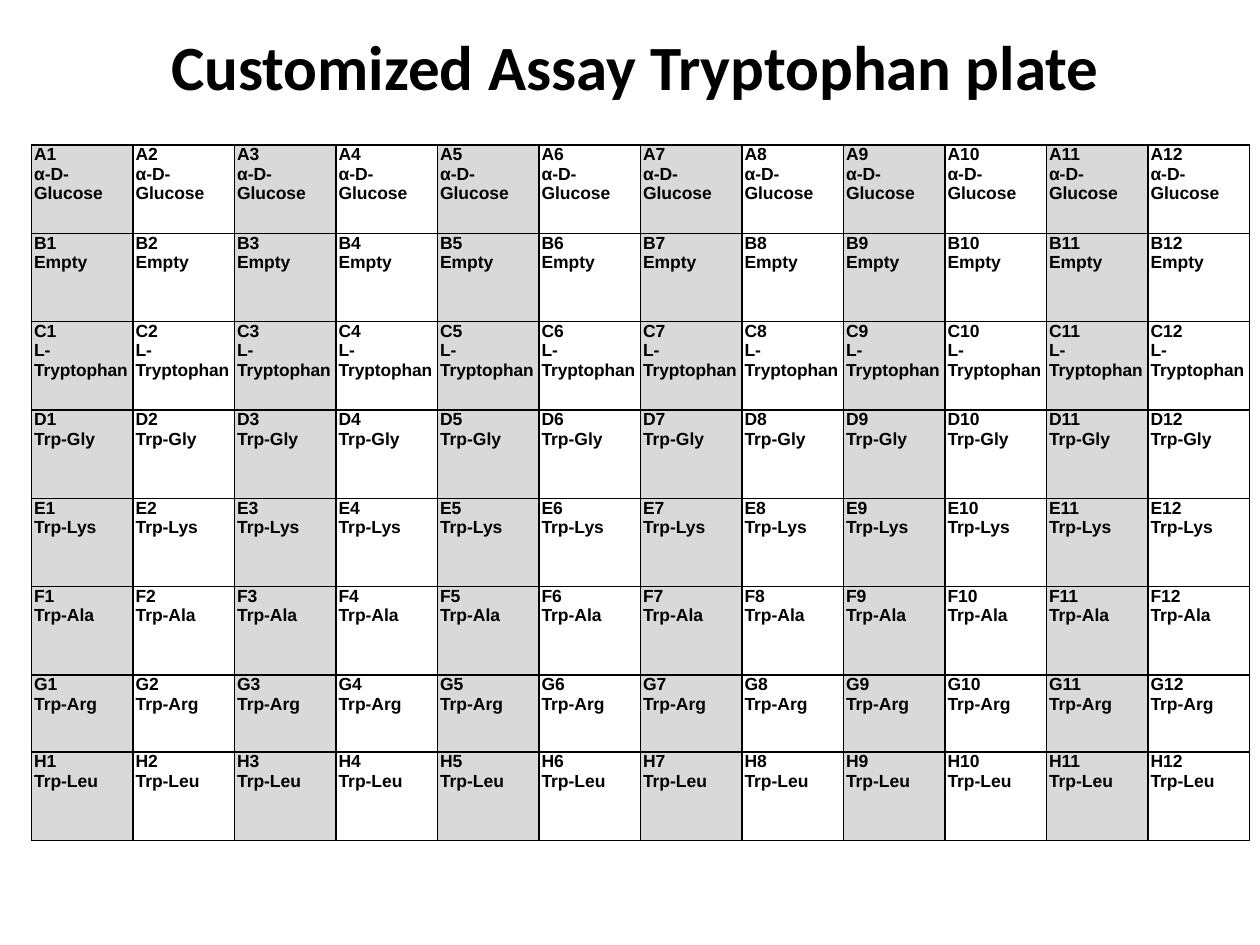
from dataclasses import dataclass

from lxml import etree
from pptx import Presentation
from pptx.dml.color import RGBColor
from pptx.enum import text as t
from pptx.oxml.ns import qn
from pptx.util import Pt

BLACK, WHITE, GREY = "000000", "FFFFFF", "D9D9D9"
COLS, COL_W = 12, 58


@dataclass
class Row:
    mark: str
    name: str
    tail: str = ""  # slightly smaller end of the name
    high: float = 50.5


ROWS = [
    Row("A", "α-D-Glucose"),
    Row("B", "Empty"),
    Row("C", "L-", "Tryptophan"),
    Row("D", "Trp-Gly"),
    Row("E", "Trp-Lys"),
    Row("F", "Trp-Ala"),
    Row("G", "Trp-Arg", high=44),
    Row("H", "Trp-Leu"),
]


def tint(code: str) -> RGBColor:
    return RGBColor.from_string(code)


def style(run, face: str, size: float) -> None:
    run.font.name = face
    run.font.size = Pt(size)
    run.font.bold = True
    run.font.color.rgb = tint(BLACK)


def edge(cell) -> None:
    """Give a cell a thin black line on all four sides."""
    props = cell._tc.get_or_add_tcPr()
    for spot, side in enumerate(("a:lnL", "a:lnR", "a:lnT", "a:lnB")):
        line = etree.Element(qn(side), w=str(Pt(1)))
        fill = etree.SubElement(line, qn("a:solidFill"))
        etree.SubElement(fill, qn("a:srgbClr"), val=BLACK)
        props.insert(spot, line)


def draw_well(cell, row: Row, num: int) -> None:
    cell.margin_left = cell.margin_right = Pt(1.5)
    cell.margin_top = cell.margin_bottom = 0
    cell.vertical_anchor = t.MSO_ANCHOR.TOP
    cell.fill.solid()
    cell.fill.fore_color.rgb = tint(GREY if num % 2 else WHITE)
    edge(cell)

    cell.text_frame.text = f"{row.mark}{num}\n{row.name}"
    for para in cell.text_frame.paragraphs:
        for run in para.runs:
            style(run, "Arial", 10)
    if row.tail:
        run = cell.text_frame.paragraphs[-1].add_run()
        run.text = row.tail
        style(run, "Arial", 9.9)


def draw_plate(slide) -> None:
    frame = slide.shapes.add_table(
        len(ROWS), COLS, Pt(18), Pt(82.8),
        Pt(COLS * COL_W), Pt(sum(row.high for row in ROWS)))
    table = frame.table
    table.first_row = table.horz_banding = False
    for col in table.columns:
        col.width = Pt(COL_W)
    for i, row in enumerate(ROWS):
        table.rows[i].height = Pt(row.high)
        for j in range(COLS):
            draw_well(table.cell(i, j), row, j + 1)


def draw_title(slide, words: str) -> None:
    title = slide.shapes.title
    title.left, title.top = Pt(54), Pt(12.2)
    title.width, title.height = Pt(618), Pt(51)
    frame = title.text_frame
    frame.text = words
    frame.word_wrap = True
    frame.auto_size = t.MSO_AUTO_SIZE.NONE
    frame.vertical_anchor = t.MSO_ANCHOR.TOP
    frame.paragraphs[0].alignment = t.PP_ALIGN.CENTER
    style(frame.paragraphs[0].runs[0], "Calibri", 36)


def main() -> None:
    deck = Presentation()
    deck.slide_width, deck.slide_height = Pt(720), Pt(540)
    # Title Only layout
    slide = deck.slides.add_slide(deck.slide_layouts[5])
    draw_plate(slide)
    draw_title(slide, "Customized Assay Tryptophan plate")
    deck.save("out.pptx")


if __name__ == "__main__":
    main()
